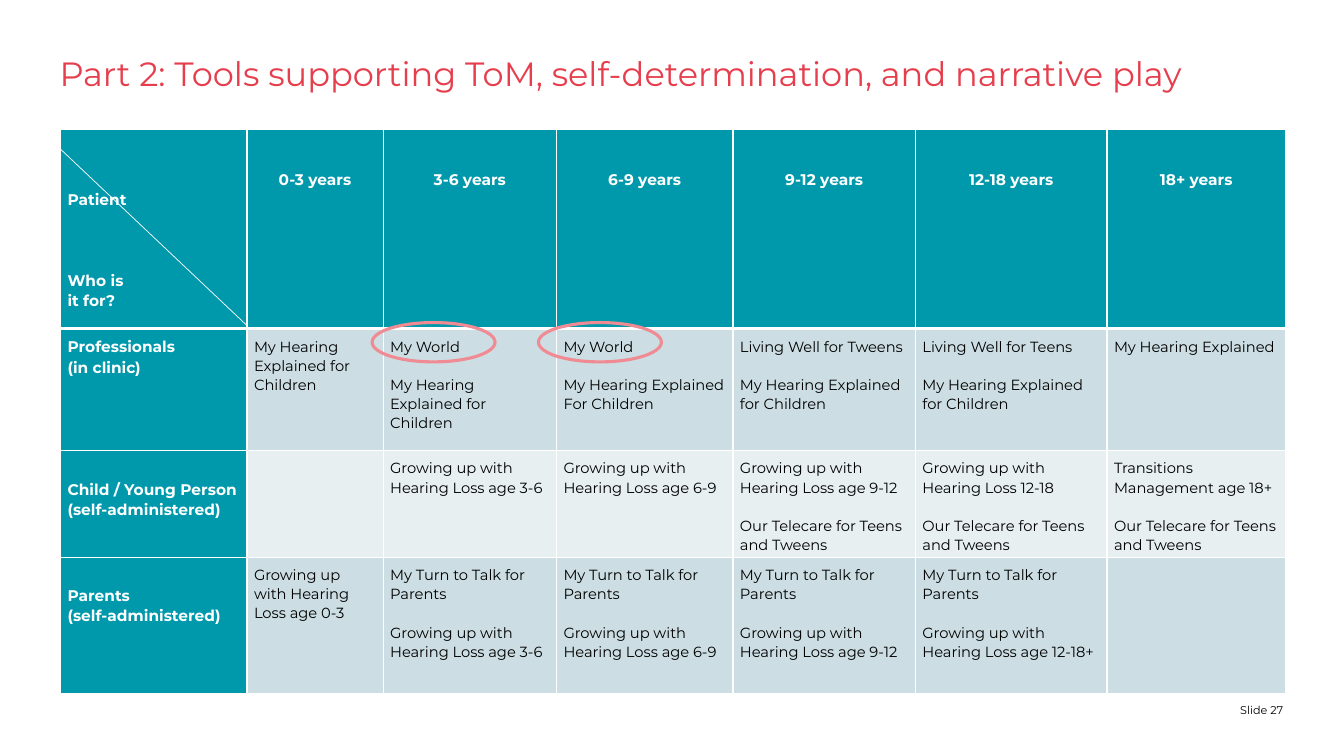
from dataclasses import dataclass

from lxml import etree
from pptx import Presentation
from pptx.dml.color import RGBColor
from pptx.enum.shapes import MSO_CONNECTOR as Connector, MSO_SHAPE as Preset
from pptx.enum.text import MSO_ANCHOR as Anchor, PP_ALIGN as Align
from pptx.oxml.ns import qn
from pptx.util import Inches, Pt


@dataclass(frozen=True)
class Theme:
    font: str = "Montserrat"
    title: str = "E63E4D"
    header: str = "0099AC"
    band_dark: str = "CCDEE3"
    band_light: str = "E7EFF1"
    white: str = "FFFFFF"
    black: str = "000000"
    highlight: str = "F08B94"
    title_size: float = 24
    label_size: float = 11
    body_size: float = 10.5
    footer_size: float = 8


THEME = Theme()
LINE_SPACING = 1.07
BODY_GAP = 13.7
CORNER_GAP = 43
LABEL_LINE = 0.2

COLUMN_WIDTHS = [1.85, 1.35, 1.72, 1.75, 1.81, 1.9, 1.77]
ROW_HEIGHTS = [1.98, 1.21, 1.06, 1.35]
AGES = ["0-3 years", "3-6 years", "6-9 years", "9-12 years", "12-18 years", "18+ years"]

EXPLAINED = "My Hearing Explained"
EXPLAINED_CHILDREN = f"{EXPLAINED} for Children"
GROWING_UP = "Growing up with\nHearing Loss"
GROWING_UP_WRAPPED = "Growing up with Hearing Loss"
TELECARE = "Our Telecare for Teens and Tweens"
MY_TURN = "My Turn to Talk for Parents"

# Label, top margin of the label, band colour, tools for each age group.
# A blank line in a cell's text starts a new block.
AUDIENCES = [
    ("Professionals\n(in clinic)", 0.08, THEME.band_dark, [
        EXPLAINED_CHILDREN,
        f"My World\n\n{EXPLAINED_CHILDREN}",
        f"My World\n\n{EXPLAINED}\nFor Children",
        f"Living Well for Tweens\n\n{EXPLAINED_CHILDREN}",
        f"Living Well for Teens\n\n{EXPLAINED_CHILDREN}",
        EXPLAINED,
    ]),
    ("Child / Young Person\n(self-administered)", 0.08 + LABEL_LINE, THEME.band_light, [
        "",
        f"{GROWING_UP} age 3-6",
        f"{GROWING_UP} age 6-9",
        f"{GROWING_UP} age 9-12\n\n{TELECARE}",
        f"{GROWING_UP} 12-18\n\n{TELECARE}",
        f"Transitions Management age 18+\n\n{TELECARE}",
    ]),
    ("Parents\n(self-administered)", 0.08 + LABEL_LINE, THEME.band_dark, [
        f"{GROWING_UP_WRAPPED} age 0-3",
        f"{MY_TURN}\n\n{GROWING_UP_WRAPPED} age 3-6",
        f"{MY_TURN}\n\n{GROWING_UP_WRAPPED} age 6-9",
        f"{MY_TURN}\n\n{GROWING_UP_WRAPPED} age 9-12",
        f"{MY_TURN}\n\n{GROWING_UP} age 12-18+",
        "",
    ]),
]


def write_text(frame, text, *, size, color, bold=False, align=Align.LEFT,
               spacing=1.0, block_gap=0):
    """Write one paragraph a line; a blank line becomes space before the next block."""
    frame.word_wrap = True
    paragraph = frame.paragraphs[0]
    for block_index, block in enumerate(text.split("\n\n")):
        for line_index, line in enumerate(block.split("\n")):
            if block_index or line_index:
                paragraph = frame.add_paragraph()
            if block_index and not line_index:
                paragraph.space_before = Pt(block_gap)
            paragraph.alignment = align
            paragraph.line_spacing = spacing
            paragraph.font.size = Pt(size)
            if line:
                font = paragraph.add_run().font
                paragraph.runs[0].text = line
                font.name = THEME.font
                font.size = Pt(size)
                font.bold = bold
                font.color.rgb = RGBColor.from_string(color)


def clear_margins(frame):
    frame.margin_left = frame.margin_right = 0
    frame.margin_top = frame.margin_bottom = 0


def set_borders(cell, **widths):
    properties = cell._tc.get_or_add_tcPr()
    for side in "LRTB":
        width = Pt(widths.get(side, 1))
        border = etree.SubElement(properties, qn(f"a:ln{side}"), w=str(width))
        fill = etree.SubElement(border, qn("a:solidFill"))
        etree.SubElement(fill, qn("a:srgbClr"), val=THEME.white)


def fill_cell(cell, text, fill, *, top, borders, **text_format):
    cell.margin_left = cell.margin_right = Inches(0.07)
    cell.margin_top = Inches(top)
    cell.margin_bottom = 0
    cell.vertical_anchor = Anchor.TOP
    set_borders(cell, **borders)
    cell.fill.solid()
    cell.fill.fore_color.rgb = RGBColor.from_string(fill)
    write_text(cell.text_frame, text, spacing=LINE_SPACING, **text_format)


def add_title(slide, text):
    title = slide.shapes.title
    title.left, title.top = Inches(0.59), Inches(0.59)
    title.width, title.height = Inches(12.15), Inches(0.88)
    frame = title.text_frame
    clear_margins(frame)
    frame.vertical_anchor = Anchor.TOP
    write_text(frame, text, size=THEME.title_size, color=THEME.title, spacing=0.83)


def add_slide_number(slide, text):
    box = slide.shapes.add_textbox(Inches(11.9), Inches(6.87), Inches(0.83), Inches(0.24))
    clear_margins(box.text_frame)
    box.text_frame.vertical_anchor = Anchor.BOTTOM
    write_text(box.text_frame, text, size=THEME.footer_size, color=THEME.black,
               align=Align.RIGHT)


def add_tools_table(slide):
    table = slide.shapes.add_table(
        len(ROW_HEIGHTS), len(COLUMN_WIDTHS), Inches(0.6), Inches(1.28),
        Inches(sum(COLUMN_WIDTHS)), Inches(sum(ROW_HEIGHTS))).table
    table.first_row = table.horz_banding = False
    for column, width in zip(table.columns, COLUMN_WIDTHS):
        column.width = Inches(width)
    for row, height in zip(table.rows, ROW_HEIGHTS):
        row.height = Inches(height)

    label = dict(size=THEME.label_size, color=THEME.white, bold=True)
    body = dict(size=THEME.body_size, color=THEME.black, block_gap=BODY_GAP)
    heading_borders = {"B": 3}
    fill_cell(table.cell(0, 0), "Patient\n\nWho is\nit for?", THEME.header,
              top=3 * LABEL_LINE, borders=heading_borders, block_gap=CORNER_GAP, **label)
    for column, age in enumerate(AGES, start=1):
        fill_cell(table.cell(0, column), age, THEME.header, top=2 * LABEL_LINE,
                  borders=heading_borders, align=Align.CENTER, **label)
    for row, (audience, label_top, band, tools) in enumerate(AUDIENCES, start=1):
        borders = {"T": 3} if row == 1 else {}
        fill_cell(table.cell(row, 0), audience, THEME.header, top=label_top,
                  borders=borders, **label)
        for column, tool in enumerate(tools, start=1):
            fill_cell(table.cell(row, column), tool, band, top=0.08,
                      borders=borders, **body)


def add_corner_diagonal(slide):
    line = slide.shapes.add_connector(
        Connector.STRAIGHT, Inches(0.59), Inches(1.47), Inches(2.45), Inches(3.23))
    line.line.color.rgb = RGBColor.from_string(THEME.white)
    line.line.width = Pt(0.5)
    etree.SubElement(line._element.spPr, qn("a:effectLst"))


def add_highlight(slide, left):
    ellipse = slide.shapes.add_shape(
        Preset.OVAL, Inches(left), Inches(3.2), Inches(1.22), Inches(0.39))
    ellipse.shadow.inherit = False
    ellipse.fill.background()
    ellipse.line.color.rgb = RGBColor.from_string(THEME.highlight)
    ellipse.line.width = Pt(2.25)


def main():
    presentation = Presentation()
    presentation.slide_width = Inches(13.33)
    presentation.slide_height = Inches(7.5)
    slide = presentation.slides.add_slide(presentation.slide_layouts.get_by_name("Title Only"))
    add_title(slide, "Part 2: Tools supporting ToM, self-determination, and narrative play")
    add_slide_number(slide, "Slide 27")
    add_tools_table(slide)
    add_corner_diagonal(slide)
    for left in (3.69, 5.34):
        add_highlight(slide, left)
    presentation.save("out.pptx")


if __name__ == "__main__":
    main()
